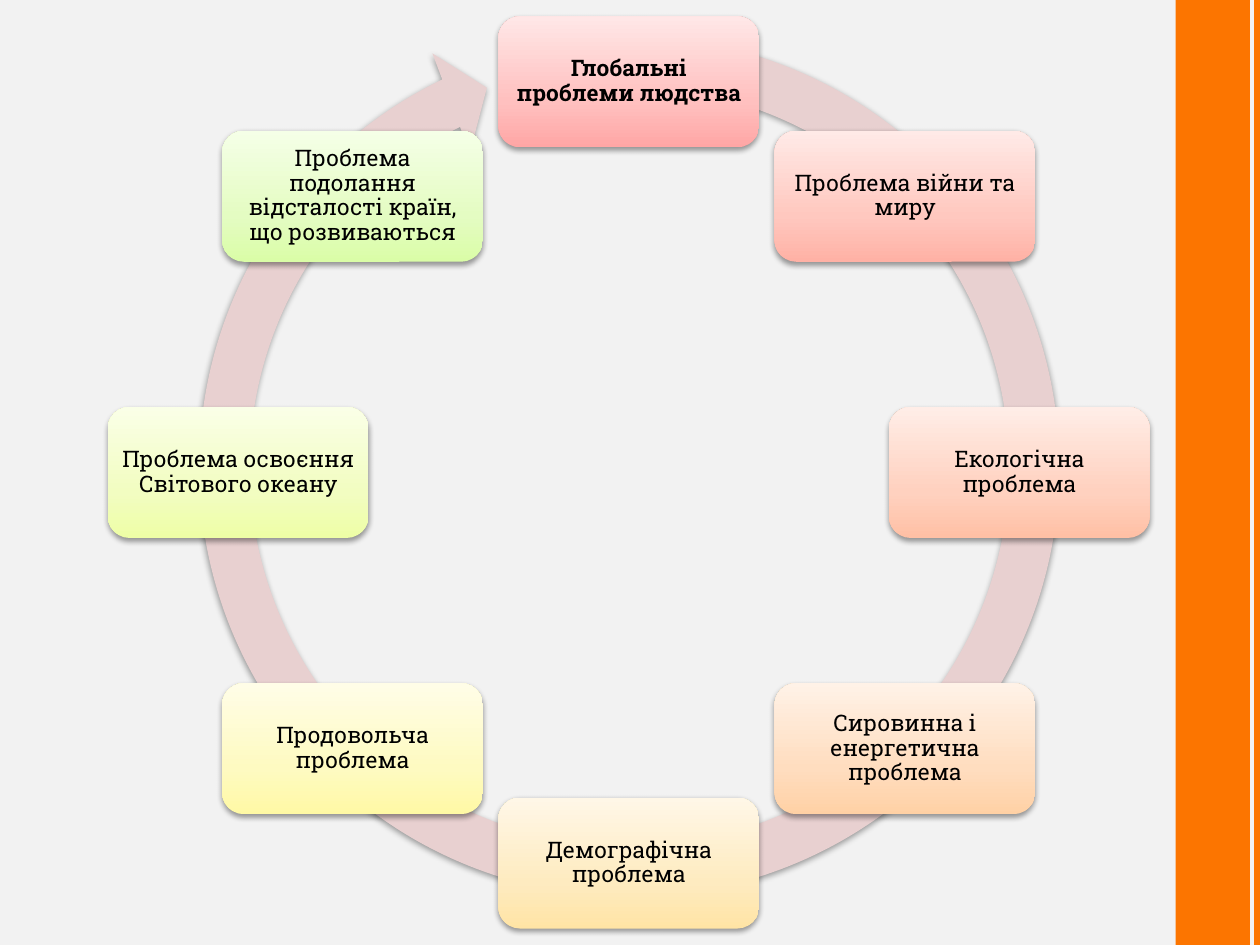
from copy import deepcopy
from math import cos, radians, sin

from lxml import etree
from pptx import Presentation
from pptx.dml.color import RGBColor
from pptx.enum.shapes import MSO_CONNECTOR, MSO_SHAPE
from pptx.enum.text import MSO_ANCHOR, PP_ALIGN
from pptx.oxml import parse_xml
from pptx.oxml.ns import nsdecls, qn
from pptx.util import Inches, Pt

CENTER = PP_ALIGN.CENTER
MIDDLE = MSO_ANCHOR.MIDDLE
RECTANGLE = MSO_SHAPE.RECTANGLE
ROUNDED = MSO_SHAPE.ROUNDED_RECTANGLE
CIRCULAR_ARROW = MSO_SHAPE.CIRCULAR_ARROW
STRAIGHT = MSO_CONNECTOR.STRAIGHT

ORANGE = "FC7500"
CENTER_X, CENTER_Y, RADIUS = 4.99, 3.75, 3.1
BOX_WIDTH, BOX_HEIGHT = 2.07, 1.04
RING_SIZE = 7.27
TOPICS = [
    ("Глобальні проблеми людства", ("FFA6A5", "FFC0BF", "FFE7E7")),
    ("Проблема війни та миру", ("FFB1A5", "FFC8BF", "FFEAE7")),
    ("Екологічна проблема", ("FFC0A5", "FFD1BF", "FFEDE7")),
    ("Сировинна і енергетична проблема", ("FFD1A5", "FFDDBF", "FFF2E7")),
    ("Демографічна проблема", ("FFE4A5", "FEEBC0", "FFF7E7")),
    ("Продовольча проблема", ("FFF9A5", "FEFAC1", "FFFDE7")),
    ("Проблема освоєння Світового океану", ("EEFEA6", "F2FDC1", "FAFFE7")),
    ("Проблема подолання відсталості країн, що розвиваються",
     ("DAFDA7", "E4FCC2", "F5FFE7")),
]


def paint(color, value):
    color.rgb = RGBColor.from_string(value)


def add_shadow(shape):
    shape.shadow.inherit = False
    effects = shape._element.spPr.find(qn("a:effectLst"))
    effects.append(parse_xml(
        f'<a:outerShdw {nsdecls("a")} blurRad="40000" dist="20000" dir="5400000" '
        'rotWithShape="0"><a:srgbClr val="000000"><a:alpha val="38000"/>'
        '</a:srgbClr></a:outerShdw>'))


deck = Presentation()
deck.slide_width, deck.slide_height = Inches(10), Inches(7.5)
page = deck.slides.add_slide(deck.slide_layouts[6])
page.background.fill.solid()
paint(page.background.fill.fore_color, "F2F2F2")

band = page.shapes.add_shape(RECTANGLE, Inches(9.33), 0, Inches(0.59), Inches(7.5))
band.shadow.inherit = False
band.fill.solid()
paint(band.fill.fore_color, ORANGE)
band.line.fill.background()

stripe = page.shapes.add_connector(STRAIGHT, Inches(9.98), 0, Inches(9.98), Inches(7.5))
stripe.line.width = Pt(4)
paint(stripe.line.color, ORANGE)
etree.SubElement(stripe._element.spPr, qn("a:effectLst"))

ring = page.shapes.add_shape(
    CIRCULAR_ARROW, Inches(1.36), Inches(0.07), Inches(RING_SIZE), Inches(RING_SIZE))
for index, value in enumerate((0.055, 3.307, 146.34, 168.829, 0.058)):
    ring.adjustments[index] = value
ring.fill.solid()
paint(ring.fill.fore_color, "E8D0D0")
ring.line.fill.background()
add_shadow(ring)

for index, (label, colors) in enumerate(TOPICS):
    angle = radians(index * 360 / len(TOPICS))
    left = CENTER_X + RADIUS * sin(angle) - BOX_WIDTH / 2
    top = CENTER_Y - RADIUS * cos(angle) - BOX_HEIGHT / 2
    box = page.shapes.add_shape(
        ROUNDED, Inches(left), Inches(top), Inches(BOX_WIDTH), Inches(BOX_HEIGHT))
    box.line.fill.background()
    add_shadow(box)

    box.fill.gradient()
    box.fill.gradient_angle = 90
    stop_list = box._element.spPr.find(qn("a:gradFill")).find(qn("a:gsLst"))
    stop_list.append(deepcopy(stop_list[0]))
    for stop, position, color in zip(box.fill.gradient_stops, (0, 0.35, 1), colors):
        stop.position = position
        paint(stop.color, color)

    frame = box.text_frame
    frame.text = label
    frame.word_wrap = True
    frame.vertical_anchor = MIDDLE
    frame.margin_left = frame.margin_right = Inches(0.05)
    frame.margin_top = frame.margin_bottom = Inches(0.05)
    para = frame.paragraphs[0]
    para.alignment = CENTER
    para.line_spacing = 0.9
    font = para.runs[0].font
    font.name = "Roboto Slab"
    font.size = Pt(13)
    font.bold = index == 0
    paint(font.color, "000000")

deck.save("out.pptx")
